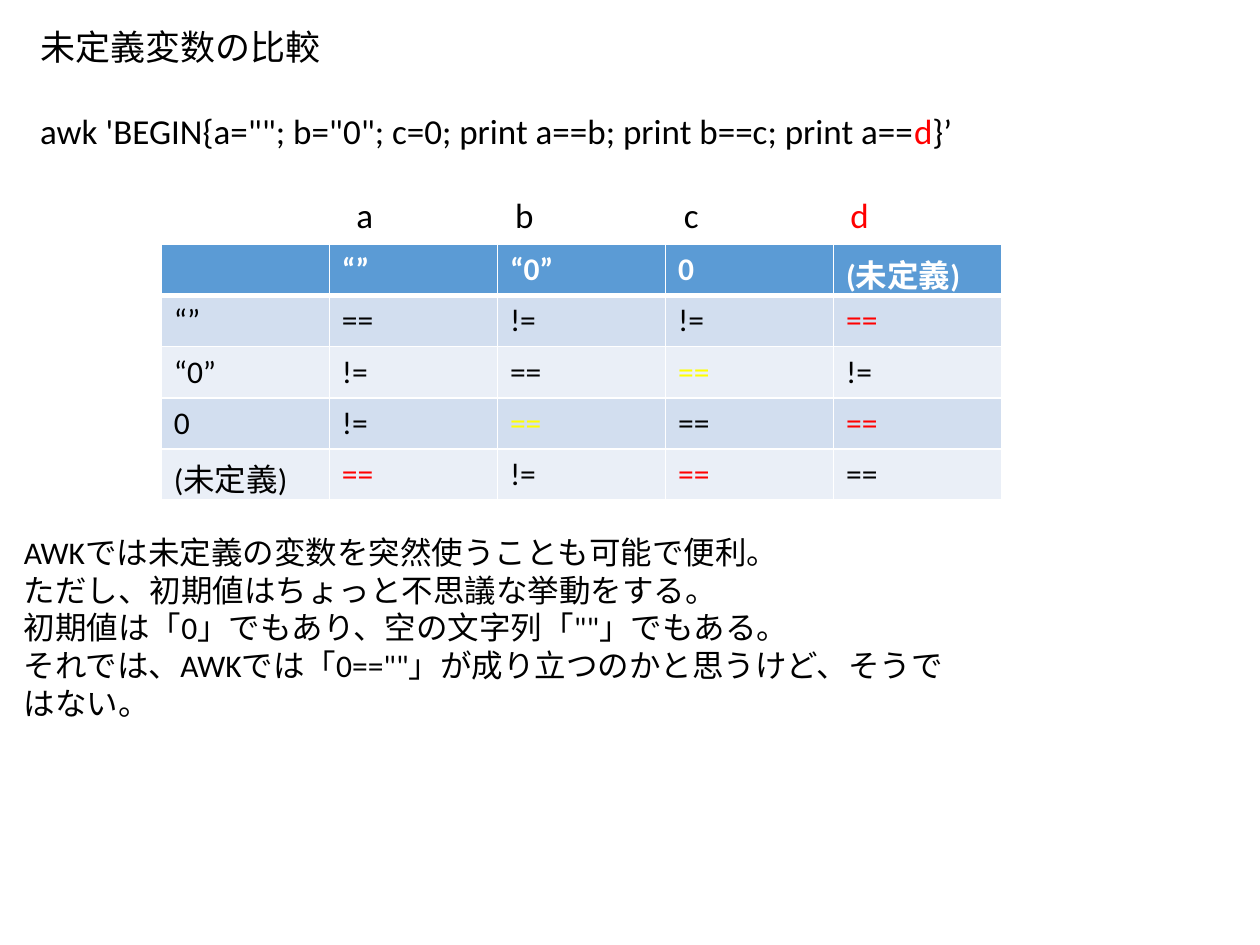
from lxml.etree import SubElement
from pptx import Presentation
from pptx.dml.color import RGBColor
from pptx.enum.text import MSO_AUTO_SIZE
from pptx.oxml import parse_xml
from pptx.oxml.ns import nsdecls, qn
from pptx.util import Inches, Pt

BLACK = RGBColor(0x00, 0x00, 0x00)
WHITE = RGBColor(0xFF, 0xFF, 0xFF)
RED = RGBColor(0xFF, 0x00, 0x00)
YELLOW = RGBColor(0xFF, 0xFF, 0x00)
HEAD = RGBColor(0x5B, 0x9B, 0xD5)
BANDS = (RGBColor(0xD2, 0xDE, 0xEF), RGBColor(0xEA, 0xEF, 0xF7))
FONT = "Calibri"

UNSET = "(未定義)"
VALUES = ["“”", "“0”", "0", UNSET]
RESULTS = [
    ["==", "!=", "!=", "=="],
    ["!=", "==", "==", "!="],
    ["!=", "==", "==", "=="],
    ["==", "!=", "==", "=="],
]
TABS = (2.51, 3.77, 5.11, 6.43)
INTRO = [
    [("未定義変数の比較", BLACK)],
    [("awk 'BEGIN{a=\"\"; b=\"0\"; c=0; print a==b; print b==c; print a==", BLACK),
     ("d", RED), ("}’", BLACK)],
    [("\ta\tb\tc\t", BLACK), ("d", RED)],
]
NOTES = [
    "AWKでは未定義の変数を突然使うことも可能で便利。",
    "ただし、初期値はちょっと不思議な挙動をする。",
    "初期値は「0」でもあり、空の文字列「\"\"」でもある。",
    "それでは、AWKでは「0==\"\"」が成り立つのかと思うけど、そうではない。",
]


def add_run(para, text, size, color, bold=False):
    run = para.add_run()
    run.text = text
    font = run.font
    font.name, font.size, font.bold = FONT, Pt(size), bold
    font.color.rgb = color


def add_text(slide, box, lines, size, gap=0):
    """Add a text box with one paragraph per line and return its paragraphs."""
    frame = slide.shapes.add_textbox(*map(Inches, box)).text_frame
    frame.word_wrap = True
    frame.auto_size = MSO_AUTO_SIZE.SHAPE_TO_FIT_TEXT
    for i, runs in enumerate(lines):
        para = frame.add_paragraph() if i else frame.paragraphs[0]
        if i and gap:
            para.space_before = Pt(gap)
        for text, color in runs:
            add_run(para, text, size, color)
    return frame.paragraphs


def set_tabs(para, stops):
    tabs = SubElement(para._p.get_or_add_pPr(), qn("a:tabLst"))
    for stop in stops:
        SubElement(tabs, qn("a:tab"), pos=str(Inches(stop)), algn="l")


def set_edges(cell, widths):
    """Draw white borders; widths are points for each side."""
    props = cell._tc.get_or_add_tcPr()
    for i, (side, width) in enumerate(widths.items()):
        props.insert(i, parse_xml(
            f'<a:ln{side} {nsdecls("a")} w="{Pt(width)}"><a:solidFill>'
            f'<a:srgbClr val="{WHITE}"/></a:solidFill></a:ln{side}>'))


def get_color(row, col):
    """Mark equality between two different values."""
    if row == 0:
        return WHITE
    if col == 0 or row == col or RESULTS[row - 1][col - 1] == "!=":
        return BLACK
    return RED if UNSET in (VALUES[row - 1], VALUES[col - 1]) else YELLOW


def add_grid(slide):
    rows = [["", *VALUES]]
    rows += [[name, *line] for name, line in zip(VALUES, RESULTS)]
    size = len(rows)
    box = map(Inches, (1.28, 1.94, 6.67, 2.03))
    table = slide.shapes.add_table(size, size, *box).table
    for r, line in enumerate(rows):
        for c, text in enumerate(line):
            cell = table.cell(r, c)
            cell.fill.solid()
            cell.fill.fore_color.rgb = BANDS[(r - 1) % 2] if r else HEAD
            set_edges(cell, {"L": 1, "R": 1, "T": 1 if r != 1 else 3,
                             "B": 1 if r else 3})
            if text:
                add_run(cell.text_frame.paragraphs[0], text, 18,
                        get_color(r, c), bold=r == 0)


def main():
    deck = Presentation()
    deck.slide_width, deck.slide_height = Inches(10), Inches(7.5)
    slide = deck.slides.add_slide(deck.slide_layouts[6])
    intro = add_text(slide, (0.22, 0.15, 9.49, 1.78), INTRO, 20, gap=24)
    set_tabs(intro[-1], TABS)
    add_grid(slide)
    notes = [[(line, BLACK)] for line in NOTES]
    add_text(slide, (0.09, 4.18, 7.62, 1.31), notes, 18)
    deck.save("out.pptx")


if __name__ == "__main__":
    main()
